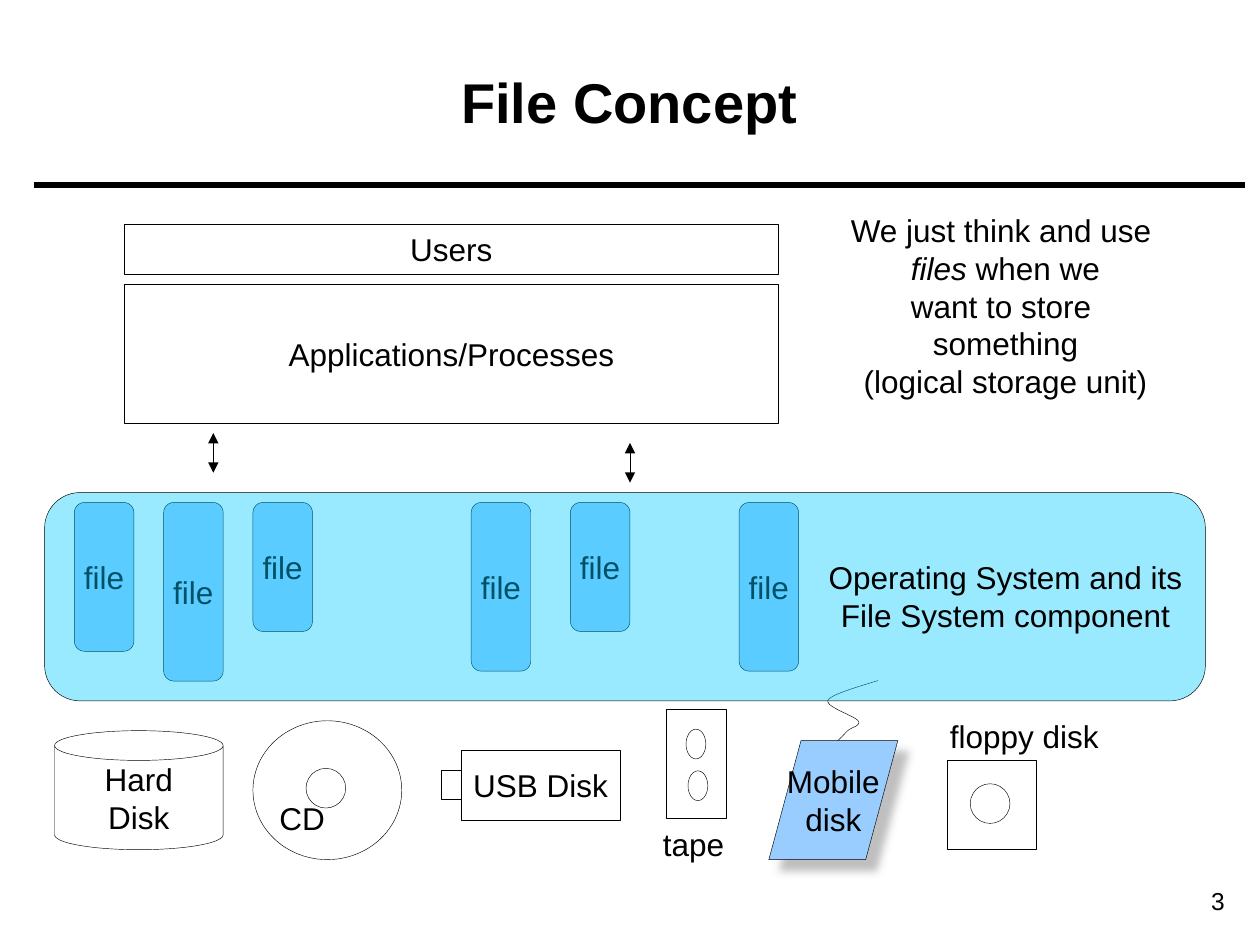
from dataclasses import dataclass
from typing import Optional

from lxml.etree import SubElement
from pptx import Presentation
from pptx.dml.color import RGBColor
from pptx.enum.shapes import MSO_CONNECTOR, MSO_SHAPE
from pptx.enum.text import MSO_ANCHOR, MSO_AUTO_SIZE, PP_ALIGN
from pptx.oxml.ns import qn
from pptx.util import Cm, Pt

BLACK = "000000"
FILE_BLUE = "99CCFF"
SYSTEM_BLUE = "00CCFF"
HAIRLINE = 0.25


@dataclass
class Block:
    """A preset shape, measured in centimetres."""
    kind: MSO_SHAPE
    left: float
    top: float
    width: float
    height: float
    text: str = ""
    fill: Optional[str] = None
    adjust: Optional[float] = None


@dataclass
class Label:
    """A text box, measured in centimetres."""
    text: str
    left: float
    top: float
    width: float
    height: float
    size: int = 18
    bold: bool = False
    align: PP_ALIGN = PP_ALIGN.CENTER
    anchor: MSO_ANCHOR = MSO_ANCHOR.TOP
    grow: bool = True
    italic_start: str = ""


def colour(hex_code: str) -> RGBColor:
    return RGBColor.from_string(hex_code)


def outline(shape, width: float = HAIRLINE) -> None:
    shape.line.color.rgb = colour(BLACK)
    shape.line.width = Pt(width)


def write(shape, text: str, size: int = 18, bold: bool = False,
          align: PP_ALIGN = PP_ALIGN.CENTER,
          anchor: MSO_ANCHOR = MSO_ANCHOR.MIDDLE) -> None:
    frame = shape.text_frame
    frame.text = text
    frame.word_wrap = False
    frame.vertical_anchor = anchor
    for paragraph in frame.paragraphs:
        paragraph.alignment = align
        for run in paragraph.runs:
            run.font.name = "Arial"
            run.font.size = Pt(size)
            run.font.bold = bold
            run.font.color.rgb = colour(BLACK)


def draw_block(slide, block: Block):
    shape = slide.shapes.add_shape(
        block.kind, Cm(block.left), Cm(block.top), Cm(block.width), Cm(block.height))
    shape.shadow.inherit = False
    outline(shape)
    if block.fill:
        shape.fill.solid()
        shape.fill.fore_color.rgb = colour(block.fill)
    else:
        shape.fill.background()
    if block.adjust is not None:
        shape.adjustments[0] = block.adjust
    if block.text:
        write(shape, block.text)
    return shape


def draw_label(slide, label: Label) -> None:
    box = slide.shapes.add_textbox(
        Cm(label.left), Cm(label.top), Cm(label.width), Cm(label.height))
    write(box, label.text, label.size, label.bold, label.align, label.anchor)
    if label.grow:
        box.text_frame.auto_size = MSO_AUTO_SIZE.SHAPE_TO_FIT_TEXT
    if not label.italic_start:
        return
    for paragraph in box.text_frame.paragraphs:
        if paragraph.text.startswith(label.italic_start):
            first = paragraph.runs[0]
            rest = paragraph.add_run()
            rest.text = first.text[len(label.italic_start):]
            rest.font.name, rest.font.size = first.font.name, first.font.size
            rest.font.color.rgb = colour(BLACK)
            first.text = label.italic_start
            first.font.italic = True


def draw_line(slide, x1: float, y1: float, x2: float, y2: float,
              width: float = HAIRLINE, arrows: bool = False) -> None:
    line = slide.shapes.add_connector(
        MSO_CONNECTOR.STRAIGHT, Cm(x1), Cm(y1), Cm(x2), Cm(y2))
    outline(line, width)
    properties = line._element.spPr
    if arrows:
        for end in ("a:headEnd", "a:tailEnd"):
            SubElement(properties.find(qn("a:ln")), qn(end), type="triangle")
    SubElement(properties, qn("a:effectLst"))


def add_drop_shadow(shape) -> None:
    effects = shape._element.spPr.find(qn("a:effectLst"))
    shadow = SubElement(effects, qn("a:outerShdw"), blurRad=str(Pt(5)),
                        dist=str(Pt(8.5)), dir="2700000", rotWithShape="0")
    tint = SubElement(shadow, qn("a:srgbClr"), val="808080")
    SubElement(tint, qn("a:alpha"), val="50000")


def draw_curve(slide, points: list, steps: int = 12) -> None:
    """Draw joined cubic curves; each one starts where the last one ended."""
    traced = []
    for i in range(0, len(points) - 1, 3):
        a, b, c, d = points[i:i + 4]
        for step in range(1, steps + 1):
            t = step / steps
            u = 1 - t
            traced.append(tuple(
                Cm(u**3 * a[k] + 3 * u * u * t * b[k] + 3 * u * t * t * c[k] + t**3 * d[k])
                for k in (0, 1)))
    x, y = points[0]
    builder = slide.shapes.build_freeform(Cm(x), Cm(y))
    builder.add_line_segments(traced, close=False)
    curve = builder.convert_to_shape()
    curve.shadow.inherit = False
    curve.fill.background()
    outline(curve)


FILES = [(1.5, 3), (3.3, 3.6), (5.1, 2.6), (9.5, 3.4), (11.5, 2.6), (14.9, 3.4)]

BLOCKS = [
    # Layers above the operating system
    Block(MSO_SHAPE.RECTANGLE, 2.5, 4.52, 13.2, 1, "Users"),
    Block(MSO_SHAPE.RECTANGLE, 2.5, 5.73, 13.2, 2.8, "Applications/Processes"),
    # Hard disk, CD and USB disk
    Block(MSO_SHAPE.CAN, 1.1, 14.73, 3.4, 2.4, "Hard\vDisk", adjust=0.25),
    Block(MSO_SHAPE.OVAL, 5.1, 14.53, 3, 2.8),
    Block(MSO_SHAPE.OVAL, 6.17, 15.49, 0.8, 0.8),
    Block(MSO_SHAPE.RECTANGLE, 9.3, 15.13, 3.2, 1.4, "USB Disk"),
    Block(MSO_SHAPE.RECTANGLE, 8.9, 15.52, 0.4, 0.6),
    # Tape and floppy disk
    Block(MSO_SHAPE.RECTANGLE, 13.44, 14.3, 1.2, 2.2),
    Block(MSO_SHAPE.OVAL, 13.83, 14.7, 0.4, 0.6),
    Block(MSO_SHAPE.OVAL, 13.87, 15.54, 0.4, 0.6),
    Block(MSO_SHAPE.RECTANGLE, 19.1, 15.32, 1.8, 1.8),
    Block(MSO_SHAPE.OVAL, 19.56, 15.8, 0.8, 0.8),
]
MOBILE_DISK = Block(MSO_SHAPE.PARALLELOGRAM, 15.5, 14.93, 2.6, 2.4,
                    "Mobile\ndisk", FILE_BLUE, 0.27)
SYSTEM = Block(MSO_SHAPE.ROUNDED_RECTANGLE, 0.9, 9.93, 23.4, 4.2,
               fill=SYSTEM_BLUE, adjust=0.17)
CABLE = [(16.89, 14.93), (16.97, 14.86), (17.04, 14.78), (17.09, 14.73),
         (17.17, 14.66), (17.37, 14.63), (17.3, 14.53),
         (17.22, 14.43), (16.64, 14.25), (16.69, 14.12),
         (16.76, 14), (17.22, 13.87), (17.7, 13.72)]

LABELS = [
    Label("File Concept", 0.89, 0.45, 23.6, 3.18, 32, True,
          anchor=MSO_ANCHOR.MIDDLE, grow=False),
    Label("3", 22.3, 17.73, 2.64, 0.86, 14, align=PP_ALIGN.RIGHT, grow=False),
    Label("CD", 5.34, 15.98, 1.5, 1.02),
    Label("tape", 12.98, 16.51, 2, 1.02),
    Label("floppy disk", 18.85, 14.33, 3.6, 1.02),
    Label("We just think and use \nfiles when we\nwant to store \nsomething\n"
          "(logical storage unit)", 16.77, 4.13, 7, 4.83, italic_start="files "),
    Label("Operating System and its\nFile System component", 16.27, 11.13, 8, 1.78),
]


def main() -> None:
    deck = Presentation()
    deck.slide_width, deck.slide_height = Cm(25.4), Cm(19.05)
    slide = deck.slides.add_slide(deck.slide_layouts[6])

    # Rule under the title
    draw_line(slide, 0.69, 3.73, 25.1, 3.73, width=3)

    # Files and devices
    for left, height in FILES:
        draw_block(slide, Block(MSO_SHAPE.ROUNDED_RECTANGLE, left, 10.13, 1.2, height,
                                "file", FILE_BLUE, 0.17))
    for block in BLOCKS:
        draw_block(slide, block)
    add_drop_shadow(draw_block(slide, MOBILE_DISK))
    draw_curve(slide, CABLE)

    # Translucent operating system layer over the files
    system = draw_block(slide, SYSTEM)
    tint = system._element.spPr.find(qn("a:solidFill"))[0]
    SubElement(tint, qn("a:alpha"), val="40000")

    # Labels and arrows
    for label in LABELS:
        draw_label(slide, label)
    for x, top in ((4.3, 8.73), (12.7, 8.93)):
        draw_line(slide, x, top, x, top + 0.8, arrows=True)

    deck.save("out.pptx")


if __name__ == "__main__":
    main()
